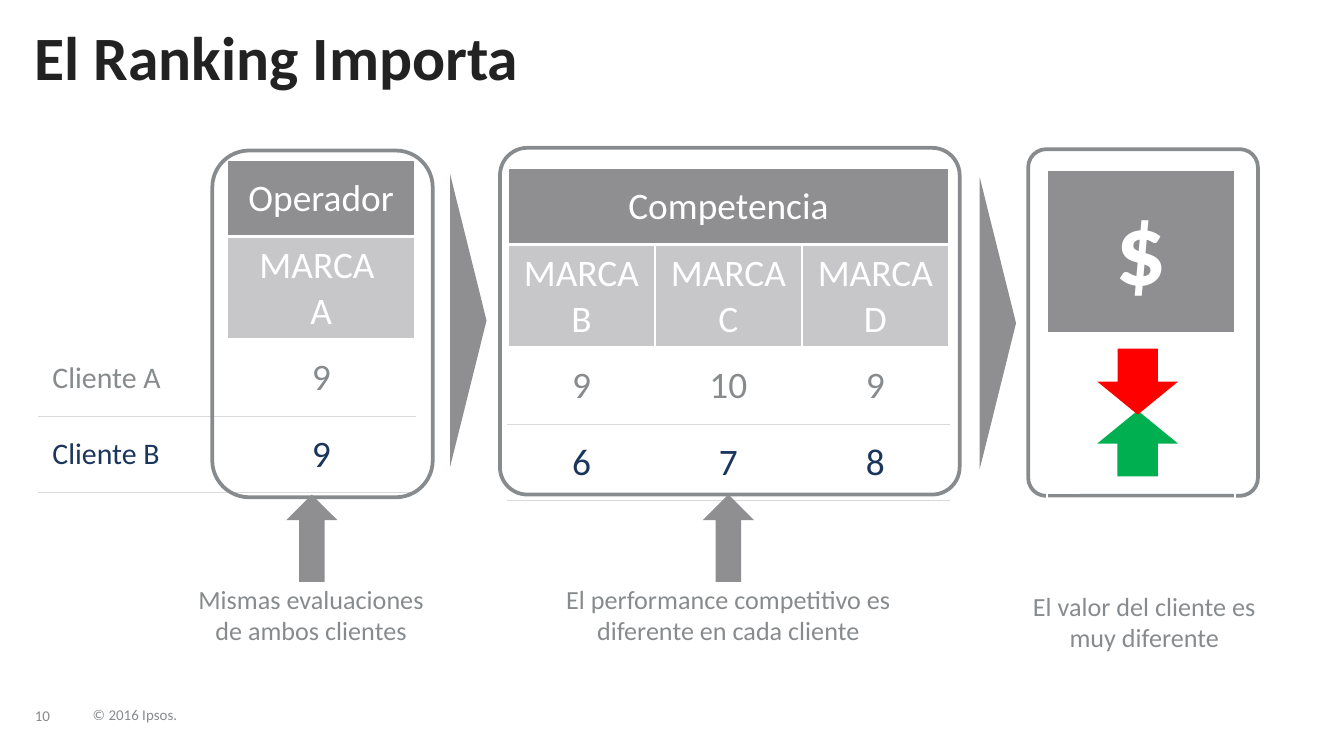
from dataclasses import dataclass

import lxml.etree
import pptx
import pptx.dml.color
import pptx.enum.shapes
import pptx.enum.text
import pptx.oxml.ns
import pptx.util

Inches = pptx.util.Inches
Pt = pptx.util.Pt
SHAPES = pptx.enum.shapes.MSO_SHAPE
ALIGN = pptx.enum.text.PP_ALIGN
ANCHOR = pptx.enum.text.MSO_ANCHOR

FONT = "Calibri"
COLORS = {
    "title": "222223", "text": "888B8D", "navy": "1B365D", "white": "FFFFFF",
    "header": "8F8F92", "brand": "C7C7C9", "rule": "D9D9D9",
    "down": "FF0000", "up": "00B050",
}


@dataclass
class Area:
    left: float
    top: float
    width: float
    height: float

    def lengths(self) -> list:
        return [Inches(v) for v in (self.left, self.top, self.width, self.height)]


@dataclass
class Entry:
    text: str = ""
    color: str = "white"
    size: float = 20
    fill: str = ""
    bold: bool = False
    align: ALIGN = ALIGN.CENTER


@dataclass
class Solid:
    kind: SHAPES
    area: Area
    fill: str = "header"
    rotation: float = 0


def rgb(name: str) -> pptx.dml.color.RGBColor:
    return pptx.dml.color.RGBColor.from_string(COLORS[name])


def write(frame, text: str, size: float, color: str, bold: bool = False,
          align: ALIGN = ALIGN.LEFT, spacing: float = 1) -> None:
    frame.text = text
    for para in frame.paragraphs:
        para.alignment = align
        para.line_spacing = spacing
        para.space_before = Pt(0)
        for span in para.runs:
            span.font.name = FONT
            span.font.size = Pt(size)
            span.font.bold = bold
            span.font.color.rgb = rgb(color)


def clear_margins(frame) -> None:
    frame.margin_left = frame.margin_right = Inches(0)
    frame.margin_top = frame.margin_bottom = Inches(0)


def add_label(page, area: Area, text: str, size: float, wrap: bool = True,
              anchor: ANCHOR = ANCHOR.TOP, **style) -> None:
    frame = page.shapes.add_textbox(*area.lengths()).text_frame
    clear_margins(frame)
    frame.word_wrap = wrap
    frame.vertical_anchor = anchor
    write(frame, text, size, "text", **style)


def add_solid(page, solid: Solid) -> None:
    shape = page.shapes.add_shape(solid.kind, *solid.area.lengths())
    shape.shadow.inherit = False
    shape.rotation = solid.rotation
    shape.fill.solid()
    shape.fill.fore_color.rgb = rgb(solid.fill)
    shape.line.fill.background()


def add_frame(page, area: Area, corner: float) -> None:
    shape = page.shapes.add_shape(SHAPES.ROUNDED_RECTANGLE, *area.lengths())
    shape.shadow.inherit = False
    shape.adjustments[0] = corner
    shape.fill.background()
    shape.line.color.rgb = rgb("text")
    shape.line.width = Pt(2)


def set_borders(cell, **sides: tuple[str, float]) -> None:
    props = cell._tc.get_or_add_tcPr()
    for index, (side, (color, width)) in enumerate(sides.items()):
        line = lxml.etree.Element(pptx.oxml.ns.qn(f"a:ln{side}"), w=str(Pt(width)))
        fill = lxml.etree.SubElement(line, pptx.oxml.ns.qn("a:solidFill"))
        lxml.etree.SubElement(fill, pptx.oxml.ns.qn("a:srgbClr"), val=COLORS[color])
        props.insert(index, line)


def add_grid(page, area: Area, rows: list[list[Entry]], header_rows: int,
             merge_top: bool = False) -> None:
    columns = len(rows[0])
    table = page.shapes.add_table(len(rows), columns, *area.lengths()).table
    table.first_row = table.horz_banding = False
    thick, thin, rule = ("white", 1.5), ("white", 1), ("rule", 0.5)
    for r, entries in enumerate(rows):
        body = r >= header_rows
        side = thin if body else thick
        for c, entry in enumerate(entries):
            cell = table.cell(r, c)
            cell.vertical_anchor = ANCHOR.MIDDLE
            if entry.text:
                write(cell.text_frame, entry.text, entry.size, entry.color,
                      entry.bold, entry.align)
            if entry.fill:
                cell.fill.solid()
                cell.fill.fore_color.rgb = rgb(entry.fill)
            else:
                cell.fill.background()
            set_borders(cell, L=side, R=side, T=rule if r > header_rows else thick,
                        B=rule if body else thick)
    if merge_top:
        table.cell(0, 0).merge(table.cell(0, columns - 1))


def header(text: str, **style) -> Entry:
    return Entry(text, fill="header", **style)


def brand(text: str) -> Entry:
    return Entry(text, fill="brand")


def client(name: str, color: str) -> Entry:
    return Entry(name, color, size=16, align=ALIGN.LEFT)


def scores(values: str, color: str) -> list[Entry]:
    return [Entry(value, color) for value in values.split()]


def main() -> None:
    deck = pptx.Presentation()
    deck.slide_width = Inches(10)
    deck.slide_height = deck.slide_width * 9 // 16
    page = deck.slides.add_slide(deck.slide_layouts[5])

    # Title and footer
    title = page.shapes.title
    title.left, title.top, title.width, title.height = Area(0.26, 0.2, 9.46, 0.5).lengths()
    clear_margins(title.text_frame)
    title.text_frame.auto_size = pptx.enum.text.MSO_AUTO_SIZE.NONE
    title.text_frame.vertical_anchor = ANCHOR.MIDDLE
    write(title.text_frame, "El Ranking Importa", 33, "title", bold=True, spacing=0.9)
    for area, text in ((Area(0.26, 5.13, 0.34, 0.26), "10"),
                       (Area(0.69, 5.2, 0.76, 0.18), "© 2016 Ipsos.")):
        add_label(page, area, text, 8, wrap=False, anchor=ANCHOR.BOTTOM, spacing=0.85)

    # Score tables
    add_grid(page, Area(3.78, 1.25, 3.28, 2.28), [
        [header("Competencia"), header(""), header("")],
        [brand(f"MARCA {letter}") for letter in "BCD"],
        scores("9 10 9", "text"),
        scores("6 7 8", "navy"),
    ], header_rows=2, merge_top=True)
    add_grid(page, Area(0.29, 1.19, 2.8, 2.28), [
        [Entry(), header("Operador")],
        [Entry(), brand("MARCA \nA")],
        [client("Cliente A", "text"), *scores("9", "text")],
        [client("Cliente B", "navy"), *scores("9", "navy")],
    ], header_rows=2)

    # Rounded frames around each group
    add_frame(page, Area(1.58, 1.12, 1.64, 2.58), 0.167)
    add_frame(page, Area(3.72, 1.1, 3.42, 2.58), 0.079)
    add_frame(page, Area(7.65, 1.11, 1.71, 2.58), 0.079)

    # Pointers between groups, arrows to the captions, value arrows
    for solid in (
        Solid(SHAPES.ISOSCELES_TRIANGLE, Area(2.4, 2.25, 2.17, 0.27), rotation=90),
        Solid(SHAPES.ISOSCELES_TRIANGLE, Area(6.34, 2.27, 2.17, 0.27), rotation=90),
        Solid(SHAPES.UP_ARROW, Area(2.13, 3.68, 0.38, 0.65)),
        Solid(SHAPES.UP_ARROW, Area(5.23, 3.68, 0.38, 0.65)),
        Solid(SHAPES.RIGHT_ARROW, Area(8.22, 3, 0.49, 0.6), "up", 270),
        Solid(SHAPES.RIGHT_ARROW, Area(8.22, 2.54, 0.49, 0.6), "down", 90),
    ):
        add_solid(page, solid)

    # Customer value
    add_grid(page, Area(7.79, 1.26, 1.4, 2.44),
             [[header("$", size=54, bold=True)], [Entry()]], header_rows=1)

    # Captions
    for area, text in (
        (Area(1.36, 4.34, 1.91, 0.47), "Mismas evaluaciones de ambos clientes"),
        (Area(3.98, 4.34, 2.88, 0.47),
         "El performance competitivo es diferente en cada cliente"),
        (Area(7.5, 4.39, 2.03, 0.47), "El valor del cliente es muy diferente"),
    ):
        add_label(page, area, text, 14, align=ALIGN.CENTER)

    deck.save("out.pptx")


if __name__ == "__main__":
    main()
